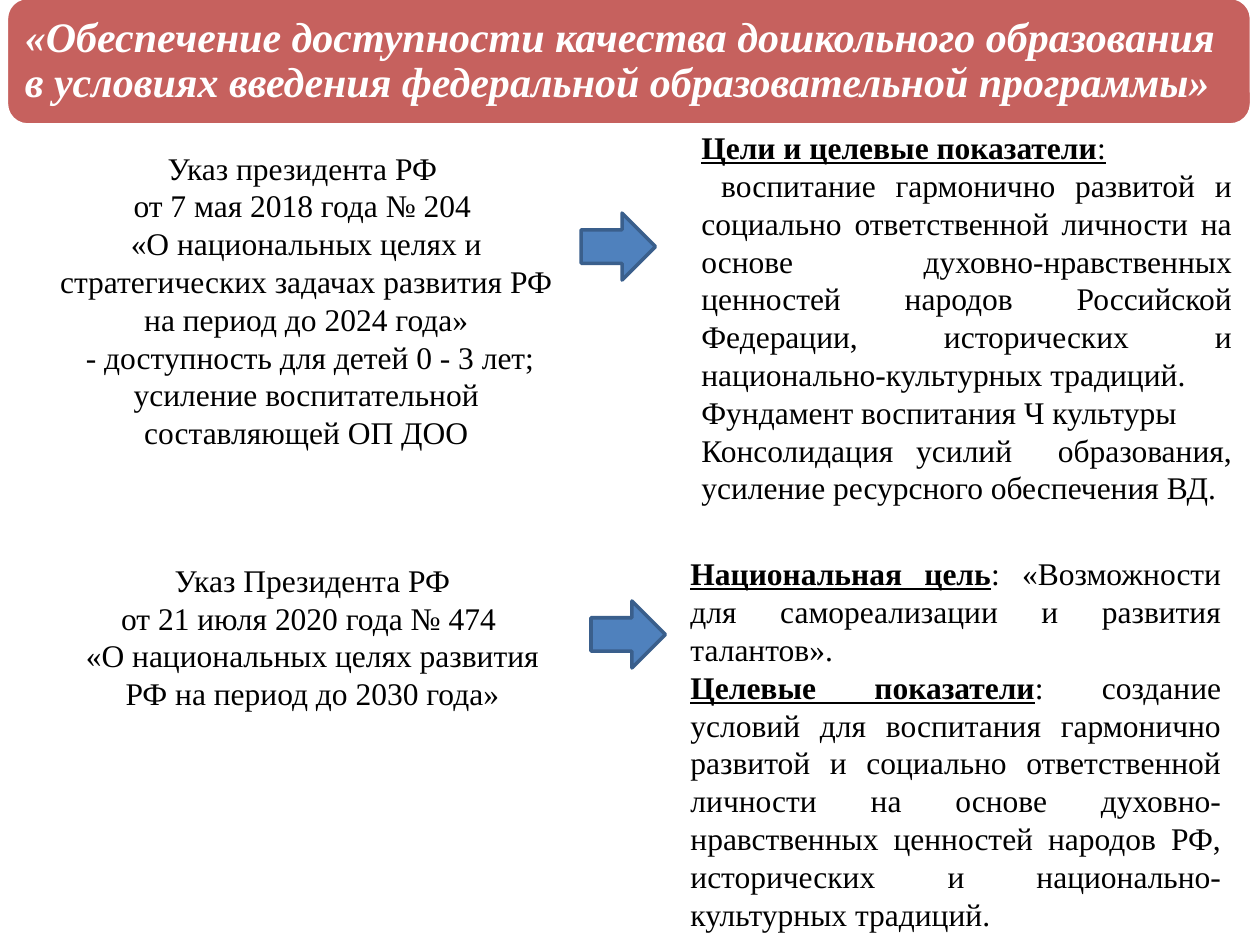
from lxml.etree import SubElement
from pptx import Presentation
from pptx.dml.color import RGBColor
from pptx.enum.shapes import MSO_SHAPE as Shape
from pptx.enum.text import MSO_ANCHOR as Anchor, MSO_AUTO_SIZE as AutoSize, PP_ALIGN as Align
from pptx.oxml.ns import qn
from pptx.util import Cm, Pt

FONT = "Times New Roman"
WHITE = RGBColor(0xFF, 0xFF, 0xFF)
BLACK = RGBColor(0x00, 0x00, 0x00)
RED = RGBColor(0xC0, 0x50, 0x4D)
BLUE = RGBColor(0x4F, 0x81, 0xBD)
DARK_BLUE = RGBColor(0x3A, 0x5F, 0x8C)

TITLE = ("«Обеспечение доступности качества дошкольного образования "
         "в условиях введения федеральной образовательной программы»")

# A paragraph is a list of (text, bold, underline) runs.
DECREE_2018 = [
    [("Указ президента РФ ", False, False)],
    [("от 7 мая 2018 года № 204 ", False, False)],
    [("«О национальных целях и стратегических задачах развития РФ "
      "на период до 2024 года»", False, False)],
    [(" - доступность для детей 0 - 3 лет; усиление воспитательной "
      "составляющей ОП ДОО", False, False)],
]
DECREE_2020 = [
    [("Указ Президента РФ", False, False)],
    [("от 21 июля 2020 года № 474 ", False, False)],
    [("«О национальных целях развития РФ на период до 2030 года»", False, False)],
]
GOALS_2018 = [
    [("Цели и целевые показатели", True, True), (":", False, True)],
    [(" воспитание гармонично развитой и социально ответственной личности "
      "на основе духовно-нравственных ценностей народов Российской Федерации, "
      "исторических и национально-культурных традиций. ", False, False)],
    [("Фундамент воспитания Ч культуры", False, False)],
    [("Консолидация усилий  образования, усиление ресурсного обеспечения ВД.",
      False, False)],
]
GOALS_2020 = [
    [("Национальная цель", True, True),
     (": «Возможности для самореализации и развития талантов».", False, False)],
    [("Целевые показатели", True, True),
     (": создание условий для воспитания гармонично развитой и социально "
      "ответственной личности на основе духовно-нравственных ценностей "
      "народов РФ, исторических и национально-культурных традиций.", False, False)],
]


def style_run(run, size, color, bold=False, italic=False, underline=False):
    font = run.font
    font.name, font.size, font.color.rgb = FONT, Pt(size), color
    font.bold, font.italic, font.underline = bold, italic, underline


def add_filled_shape(slide, kind, left, top, width, height, fill, line):
    shape = slide.shapes.add_shape(kind, Cm(left), Cm(top), Cm(width), Cm(height))
    shape.shadow.inherit = False
    shape.fill.solid()
    shape.fill.fore_color.rgb = fill
    shape.line.color.rgb = line
    shape.line.width = Pt(2)
    return shape


def add_banner(slide):
    banner = add_filled_shape(slide, Shape.ROUNDED_RECTANGLE,
                              0.13, -0.05, 25.1, 2.57, RED, WHITE)
    color = banner.fill._xPr.find(qn("a:solidFill"))[0]
    SubElement(color, qn("a:alpha"), val="90000")


def place_title(slide):
    """Fill the title placeholder and lift it above the banner."""
    title = slide.shapes.title
    title.left, title.top, title.width, title.height = Cm(0.25), Cm(0.08), Cm(24.84), Cm(2.31)
    frame = title.text_frame
    frame.text = TITLE
    frame.word_wrap = True
    frame.auto_size = AutoSize.NONE
    frame.vertical_anchor = Anchor.MIDDLE
    frame.margin_left = frame.margin_right = frame.margin_top = frame.margin_bottom = Cm(0.25)
    para = frame.paragraphs[0]
    para.alignment = Align.LEFT
    para.line_spacing = 0.9
    style_run(para.runs[0], 24, WHITE, bold=True, italic=True)
    slide.shapes._spTree.append(title._element)


def add_arrow(slide, left, top):
    arrow = add_filled_shape(slide, Shape.DOWN_ARROW, left, top, 1.35, 1.5, BLUE, DARK_BLUE)
    arrow.rotation = 270


def add_text(slide, left, top, width, height, paragraphs, alignment):
    box = slide.shapes.add_textbox(Cm(left), Cm(top), Cm(width), Cm(height))
    frame = box.text_frame
    frame.word_wrap = True
    frame.auto_size = AutoSize.SHAPE_TO_FIT_TEXT
    for index, runs in enumerate(paragraphs):
        para = frame.add_paragraph() if index else frame.paragraphs[0]
        para.alignment = alignment
        for text, bold, underline in runs:
            span = para.add_run()
            span.text = text
            style_run(span, 18, BLACK, bold=bold, underline=underline)
    return box


def main():
    deck = Presentation()
    deck.slide_width, deck.slide_height = Cm(25.4), Cm(19.05)
    slide = deck.slides.add_slide(deck.slide_layouts[5])
    add_banner(slide)
    place_title(slide)

    add_arrow(slide, 11.79, 4.22)
    add_text(slide, 0.84, 2.87, 10.67, 6.4, DECREE_2018, Align.CENTER)
    add_arrow(slide, 11.99, 12.04)
    add_text(slide, 1.3, 11.18, 10, 4.11, DECREE_2020, Align.CENTER)

    goals = add_text(slide, 13.89, 2.46, 11.2, 7.95, GOALS_2018, Align.JUSTIFY)
    goals.text_frame.paragraphs[0].alignment = Align.LEFT
    add_text(slide, 13.67, 11.05, 11.2, 7.95, GOALS_2020, Align.JUSTIFY)
    deck.save("out.pptx")


if __name__ == "__main__":
    main()
